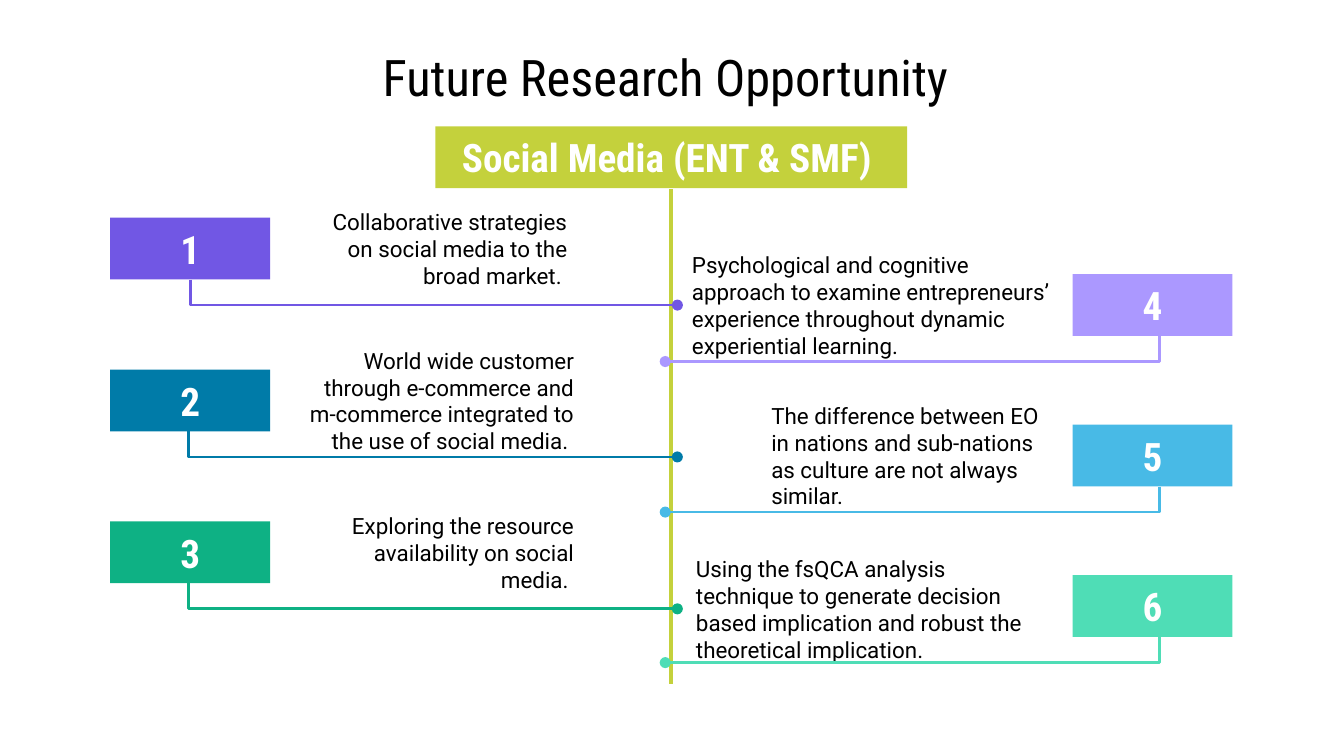
import pptx
import pptx.dml.color
import pptx.enum.shapes
import pptx.enum.text
import pptx.oxml
import pptx.oxml.ns
import pptx.util
from pptx.util import Inches

COLORS = {
    "black": "000000",
    "white": "FFFFFF",
    "lime": "C4D13C",
    "violet": "7157E4",
    "blue": "007BA8",
    "green": "0EB184",
    "lilac": "AB98FF",
    "sky": "48BAE6",
    "mint": "4FDDB6",
}
ALIGN = pptx.enum.text.PP_ALIGN
CONNECTOR = pptx.enum.shapes.MSO_CONNECTOR
BODY_FONT = "Roboto"
HEAD_FONT = "Roboto Condensed"
SPINE_X = 4.99
LABEL_WIDTH, LABEL_HEIGHT = 1.19, 0.46
LEFT_LABEL_X, RIGHT_LABEL_X = 0.82, 7.98
LEFT_TOP, LEFT_STEP = 1.62, 1.13
RIGHT_TOP, RIGHT_STEP = 2.04, 1.12
DROP = 0.19

LEFT_ITEMS = [
    ("violet", 2.17, 2.15, 0.42, 1.42,
     "Collaborative strategies on social media to the broad market. "),
    ("blue", 2.18, 2.19, 0.42, 1.4, "World wide customer through e-commerce and m-commerce "
     "integrated to the use of social media. "),
    ("green", 2.18, 2.19, 0.42, 1.4, "Exploring the resource availability on social media. "),
]
RIGHT_ITEMS = [
    ("lilac", 5.05, 2.88, 0.42, 8.63, "Psychological and cognitive approach to examine "
     "entrepreneurs’ experience throughout dynamic experiential learning."),
    ("sky", 5.64, 2.19, 0.42, 8.63, "The difference between EO in nations and sub-nations "
     "as culture are not always similar."),
    ("mint", 5.08, 2.75, 0.46, 8.63, "Using the fsQCA analysis technique to generate decision "
     "based implication and robust the theoretical implication."),
]


def rgb(name):
    return pptx.dml.color.RGBColor.from_string(COLORS[name])


def write_text(shape, text, size, font, color, align, bold=False):
    frame = shape.text_frame
    frame.word_wrap = True
    frame.vertical_anchor = pptx.enum.text.MSO_ANCHOR.MIDDLE
    frame.margin_left = frame.margin_right = Inches(0.1)
    frame.margin_top = frame.margin_bottom = Inches(0.1)
    para = frame.paragraphs[0]
    para.alignment = align
    span = para.add_run()
    span.text = text
    span.font.size = pptx.util.Pt(size)
    span.font.name = font
    span.font.bold = bold
    span.font.color.rgb = rgb(color)


def add_text(page, left, top, width, height, text, size, font, align):
    box = page.shapes.add_textbox(Inches(left), Inches(top), Inches(width), Inches(height))
    write_text(box, text, size, font, "black", align)


def add_label(page, left, top, width, text, color):
    label = page.shapes.add_shape(
        pptx.enum.shapes.MSO_SHAPE.RECTANGLE,
        Inches(left), Inches(top), Inches(width), Inches(LABEL_HEIGHT))
    label.shadow.inherit = False
    label.fill.solid()
    label.fill.fore_color.rgb = rgb(color)
    label.line.fill.background()
    write_text(label, text, 21, HEAD_FONT, "white", ALIGN.CENTER, bold=True)


def add_line(page, kind, start, end, color, weight):
    line = page.shapes.add_connector(kind, *(Inches(value) for value in start + end))
    line.line.color.rgb = rgb(color)
    line.line.width = pptx.util.Pt(weight)
    properties = line._element.spPr
    properties.append(pptx.oxml.parse_xml(
        f'<a:effectLst {pptx.oxml.ns.nsdecls("a")}/>'))
    return line


def add_branch(page, start, end, color):
    branch = add_line(page, CONNECTOR.ELBOW, start, end, color, 1.5)
    namespace = pptx.oxml.ns.nsdecls("a")
    adjustments = branch._element.xpath(".//a:avLst")[0]
    adjustments.append(pptx.oxml.parse_xml(f'<a:gd {namespace} name="adj1" fmla="val 0"/>'))
    outline = branch.line._get_or_add_ln()
    outline.append(pptx.oxml.parse_xml(f'<a:tailEnd {namespace} type="oval"/>'))


def add_items(page, items, first, label_x, top, step, dot_x, align):
    for index, (color, text_x, text_width, text_height, branch_x, text) in enumerate(items):
        y = top + index * step
        bottom = y + LABEL_HEIGHT
        add_label(page, label_x, y, LABEL_WIDTH, str(first + index), color)
        add_text(page, text_x, y + 0.02, text_width, text_height, text, 12, BODY_FONT, align)
        add_branch(page, (branch_x, bottom), (dot_x, bottom + DROP), color)


def main():
    deck = pptx.Presentation()
    deck.slide_width = Inches(10)
    deck.slide_height = Inches(10 * 9 / 16)
    page = deck.slides.add_slide(deck.slide_layouts[6])
    add_line(page, CONNECTOR.STRAIGHT, (SPINE_X, 1.41), (SPINE_X, 5.09), "lime", 2.25)
    add_label(page, 3.24, 0.94, 3.51, "Social Media (ENT & SMF) ", "lime")
    add_text(page, 0.49, 0.45, 9.01, 0.24, "Future Research Opportunity ",
             27, HEAD_FONT, ALIGN.CENTER)
    add_items(page, LEFT_ITEMS, 1, LEFT_LABEL_X, LEFT_TOP, LEFT_STEP, 5.04, ALIGN.RIGHT)
    add_items(page, RIGHT_ITEMS, 4, RIGHT_LABEL_X, RIGHT_TOP, RIGHT_STEP, 4.95, ALIGN.LEFT)
    deck.save("out.pptx")


if __name__ == "__main__":
    main()
